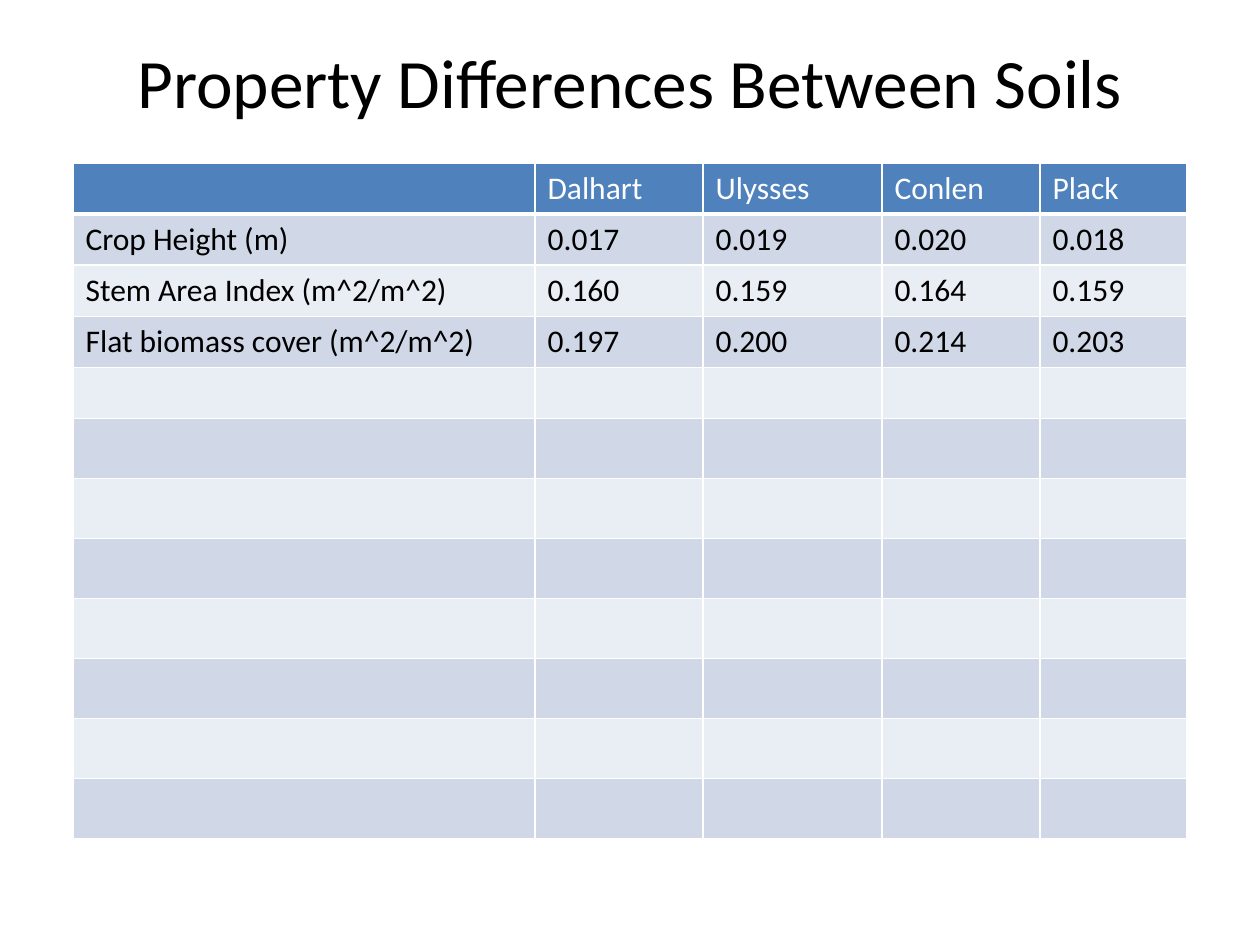
from lxml import etree
from pptx import Presentation
from pptx.dml.color import RGBColor
from pptx.enum import text
from pptx.oxml import ns
from pptx.util import Emu, Pt

PX = 914400 // 126
FONT = "Calibri"
BLACK = RGBColor(0x00, 0x00, 0x00)
WHITE = RGBColor(0xFF, 0xFF, 0xFF)
BLUE = RGBColor(0x4F, 0x81, 0xBD)
BANDS = RGBColor(0xD0, 0xD8, 0xE8), RGBColor(0xE9, 0xED, 0xF4)

SOILS = ["", "Dalhart", "Ulysses", "Conlen", "Plack"]
DATA = [
    ["Crop Height (m)", "0.017", "0.019", "0.020", "0.018"],
    ["Stem Area Index (m^2/m^2)", "0.160", "0.159", "0.164", "0.159"],
    ["Flat biomass cover (m^2/m^2)", "0.197", "0.200", "0.214", "0.203"],
]
BLANKS = 8
WIDTHS = [462, 168, 179, 158, 147]
HEIGHTS = [48] * 5 + [60] * 7


def px(count):
    return Emu(count * PX)


def set_font(para, size, color, bold=False):
    font = para.font
    font.name, font.size, font.bold = FONT, Pt(size), bold
    font.color.rgb = color


def add_title(slide, words):
    title = slide.shapes.title
    title.left, title.top = px(63), px(32)
    title.width, title.height = px(1134), px(98)
    frame = title.text_frame
    frame.text = words
    frame.auto_size = text.MSO_AUTO_SIZE.NONE
    frame.vertical_anchor = text.MSO_ANCHOR.MIDDLE
    para = frame.paragraphs[0]
    para.alignment = text.PP_ALIGN.CENTER
    set_font(para, 39.6, BLACK)


def add_edges(cell, top, base):
    """Draw white cell borders; top and base are widths in points."""
    props = cell._tc.get_or_add_tcPr()
    for side, width in zip("LRTB", (1, 1, top, base)):
        line = etree.SubElement(props, ns.qn(f"a:ln{side}"), w=str(Pt(width)))
        fill = etree.SubElement(line, ns.qn("a:solidFill"))
        etree.SubElement(fill, ns.qn("a:srgbClr"), val=str(WHITE))


def fill_cell(cell, words, row, col):
    head = row == 0
    add_edges(cell, 3 if row == 1 else 1, 3 if head else 1)
    cell.fill.solid()
    cell.fill.fore_color.rgb = BLUE if head else BANDS[(row - 1) % 2]
    para = cell.text_frame.paragraphs[0]
    if words:
        cell.text = words
        if not head and col:
            para.alignment = text.PP_ALIGN.CENTER
    set_font(para, 18, WHITE if head else BLACK, head)


def add_grid(slide, rows):
    frame = slide.shapes.add_table(
        len(rows), len(WIDTHS), px(73), px(163), px(sum(WIDTHS)), px(sum(HEIGHTS)))
    table = frame.table
    for column, width in zip(table.columns, WIDTHS):
        column.width = px(width)
    for line, height in zip(table.rows, HEIGHTS):
        line.height = px(height)
    for row, values in enumerate(rows):
        for col, words in enumerate(values):
            fill_cell(table.cell(row, col), words, row, col)


def main():
    deck = Presentation()
    deck.slide_width, deck.slide_height = px(1260), px(945)
    slide = deck.slides.add_slide(deck.slide_layouts[5])
    add_title(slide, "Property Differences Between Soils")
    add_grid(slide, [SOILS] + DATA + [[""] * len(SOILS)] * BLANKS)
    deck.save("out.pptx")


if __name__ == "__main__":
    main()
